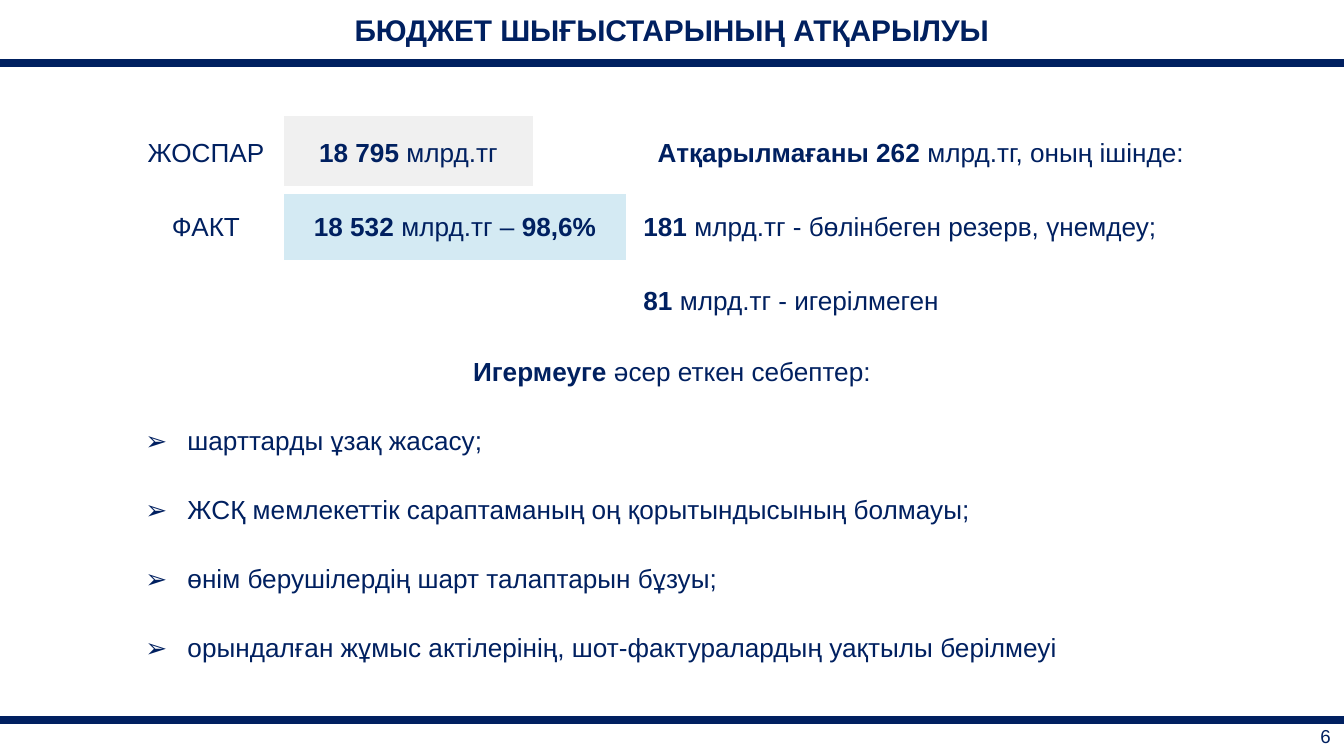
import dataclasses

import lxml.etree
import pptx
import pptx.dml.color
import pptx.enum.text
import pptx.oxml.ns
import pptx.util

PX = 914400 / 134.4
PAGE_WIDTH, PAGE_HEIGHT = 1344, 756
ALIGN = pptx.enum.text.PP_ALIGN
MIDDLE = pptx.enum.text.MSO_ANCHOR.MIDDLE
NO_STYLE_NO_GRID = "{2D5ABB26-0587-4C30-8999-92F81FD0307C}"


@dataclasses.dataclass(frozen=True)
class Theme:
    font: str = "Arial"
    navy: str = "002060"
    white: str = "FFFFFF"
    plan_fill: str = "F0F0F0"
    fact_fill: str = "D4EAF3"
    title_size: int = 16
    body_size: int = 14
    number_size: int = 10
    rule_width: float = 4.5


THEME = Theme()

# Asterisks enclose bold text; each key is (row, column).
BUDGET_CELLS = {
    (0, 0): ("ЖОСПАР", ALIGN.CENTER),
    (0, 1): ("*18 795* млрд.тг", ALIGN.CENTER),
    (0, 3): ("*Атқарылмағаны 262* млрд.тг, оның ішінде:", ALIGN.CENTER),
    (1, 0): ("ФАКТ", ALIGN.CENTER),
    (1, 1): ("*18 532 *млрд.тг – *98,6%*", ALIGN.CENTER),
    (1, 3): ("*181* млрд.тг - бөлінбеген резерв, үнемдеу;", ALIGN.LEFT),
    (2, 3): ("*81* млрд.тг - игерілмеген", ALIGN.LEFT),
    (3, 0): ("*Игермеуге* әсер еткен себептер:", ALIGN.CENTER),
}
REASONS = [
    "шарттарды ұзақ жасасу;",
    "ЖСҚ мемлекеттік сараптаманың оң қорытындысының болмауы;",
    "өнім берушілердің шарт талаптарын бұзуы;",
    "орындалған жұмыс актілерінің, шот-фактуралардың уақтылы берілмеуі",
]
COLUMN_WIDTHS = [148, 257, 93, 582]
FIGURE_ROWS, FIGURE_HEIGHT = 3, 74
REASON_HEIGHT = 69
FIRST_REASON_ROW = 4


def px(length):
    return pptx.util.Emu(round(length * PX))


def rgb(color):
    return pptx.dml.color.RGBColor.from_string(color)


def sub(parent, tag, **attributes):
    return lxml.etree.SubElement(parent, pptx.oxml.ns.qn(tag), attributes)


def write_text(frame, text, size=THEME.body_size, align=ALIGN.LEFT, bullet=None):
    """Write one paragraph in which asterisks enclose the bold runs."""
    para = frame.paragraphs[0]
    para.alignment = align
    for index, piece in enumerate(text.split("*")):
        if piece:
            span = para.add_run()
            span.text = piece
            span.font.name = THEME.font
            span.font.size = pptx.util.Pt(size)
            span.font.bold = index % 2 == 1
            span.font.color.rgb = rgb(THEME.navy)
    if bullet:
        properties = para._p.get_or_add_pPr()
        properties.set("marL", str(px(42)))
        properties.set("indent", str(px(-42)))
        color = sub(properties, "a:buClr")
        sub(color, "a:srgbClr", val=THEME.navy)
        sub(properties, "a:buFont", typeface=THEME.font)
        sub(properties, "a:buChar", char=bullet)


def set_borders(cell, sides, color):
    """Draw the sides, named by letters in the order L, R, T, B."""
    properties = cell._tc.get_or_add_tcPr()
    for index, side in enumerate(sides):
        line = sub(properties, f"a:ln{side}", w=str(pptx.util.Pt(THEME.rule_width)))
        fill = sub(line, "a:solidFill")
        sub(fill, "a:srgbClr", val=color)
        properties.insert(index, line)


def add_plain_table(page, left, top, widths, heights):
    """Add a table without banding, grid lines or cell fills."""
    frame = page.shapes.add_table(len(heights), len(widths), px(left), px(top),
                                  px(sum(widths)), px(sum(heights)))
    table = frame.table
    table.first_row = table.horz_banding = False
    style = table._tbl.tblPr.find(pptx.oxml.ns.qn("a:tableStyleId"))
    style.text = NO_STYLE_NO_GRID
    for column, width in zip(table.columns, widths):
        column.width = px(width)
    for row, height in zip(table.rows, heights):
        row.height = px(height)
    for cell in table.iter_cells():
        cell.fill.background()
        cell.vertical_anchor = MIDDLE
    return table


def add_band(page, left, top, width, height, text, rule_side, **text_format):
    """Add a one-cell table with a navy rule along one side."""
    cell = add_plain_table(page, left, top, [width], [height]).cell(0, 0)
    write_text(cell.text_frame, text, **text_format)
    set_borders(cell, rule_side, THEME.navy)


def add_budget_table(page, left, top):
    row_count = FIRST_REASON_ROW + len(REASONS)
    heights = ([FIGURE_HEIGHT] * FIGURE_ROWS
               + [REASON_HEIGHT] * (row_count - FIGURE_ROWS))
    table = add_plain_table(page, left, top, COLUMN_WIDTHS, heights)
    last_column = len(COLUMN_WIDTHS) - 1

    table.cell(1, 1).merge(table.cell(1, 2))
    table.cell(2, 0).merge(table.cell(2, 2))
    for row in range(FIGURE_ROWS, row_count):
        table.cell(row, 0).merge(table.cell(row, last_column))

    for row, color in enumerate((THEME.plan_fill, THEME.fact_fill)):
        fill = table.cell(row, 1).fill
        fill.solid()
        fill.fore_color.rgb = rgb(color)
    for row in range(FIGURE_ROWS):
        for column in range(last_column + 1):
            sides = (("L" if column else "")
                     + ("R" if column < last_column else "")
                     + ("T" if row else "") + "B")
            set_borders(table.cell(row, column), sides, THEME.white)

    for (row, column), (text, align) in BUDGET_CELLS.items():
        write_text(table.cell(row, column).text_frame, text, align=align)
    for row, reason in enumerate(REASONS, FIRST_REASON_ROW):
        write_text(table.cell(row, 0).text_frame, reason, bullet="➢")


def main():
    deck = pptx.Presentation()
    deck.slide_width, deck.slide_height = px(PAGE_WIDTH), px(PAGE_HEIGHT)
    page = deck.slides.add_slide(deck.slide_layouts.get_by_name("Blank"))
    add_band(page, 0, 0, PAGE_WIDTH, 63, "*БЮДЖЕТ ШЫҒЫСТАРЫНЫҢ АТҚАРЫЛУЫ*", "B",
             size=THEME.title_size, align=ALIGN.CENTER)
    add_band(page, 0, 720, PAGE_WIDTH, 32, "6", "T",
             size=THEME.number_size, align=ALIGN.RIGHT)
    add_budget_table(page, 132, 116)
    deck.save("out.pptx")


if __name__ == "__main__":
    main()
